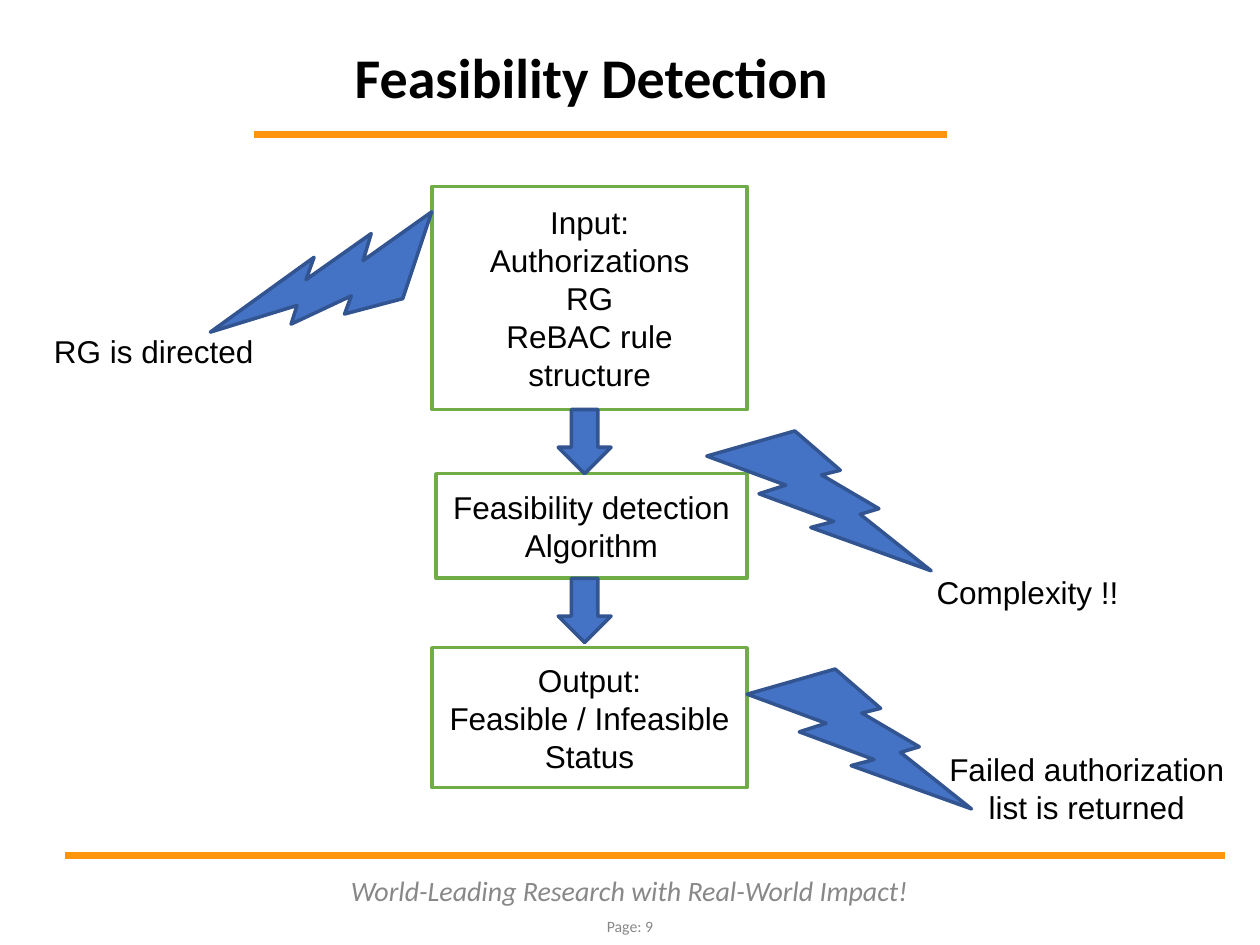
from lxml import etree
from pptx import Presentation
from pptx.dml.color import RGBColor
from pptx.enum.shapes import MSO_CONNECTOR, MSO_SHAPE
from pptx.enum.text import MSO_ANCHOR, PP_ALIGN
from pptx.oxml.ns import qn
from pptx.util import Inches, Pt

COLORS = {
    "rule": "FF950E", "box": "70AD47", "marker": "4472C4", "marker_line": "325491",
    "white": "FFFFFF", "black": "000000", "footer": "888888",
}

# Places are (left, top, width, height) in inches
RULES = [(2.02, 1.07, 5.5), (0.52, 6.79, 9.2)]  # left, top, length
HEADINGS = [
    ("World-Leading Research with Real-World Impact!", (2.58, 6.89, 4.83, 0.36),
     dict(size=16, color="footer", italic=True)),
    ("Page: 9", (4.06, 7.17, 1.88, 0.36), dict(size=9, color="footer")),
    ("Feasibility Detection", (2, 0.41, 5.39, 0.51),
     dict(size=32, bold=True, anchor=MSO_ANCHOR.BOTTOM)),
]
STEPS = [
    ("Input:\nAuthorizations\nRG\nReBAC rule structure", (3.43, 1.48, 2.5, 1.77)),
    ("Feasibility detection Algorithm", (3.46, 3.76, 2.47, 0.83)),
    ("Output:\nFeasible / Infeasible\nStatus", (3.43, 5.14, 2.5, 1.11)),
]
NOTES = [
    ("Failed authorization\nlist is returned", (7.25, 6, 2.75, 0.51)),
    ("RG is directed", (-0.03, 2.53, 2.5, 0.51)),
    ("Complexity !!", (6.71, 4.36, 2.89, 0.67)),
]
BOLTS = [(5.61, 3.42, 0), (5.93, 5.31, 0), (1.74, 1.66, 124.4)]  # left, top, rotation
BOLT_SIZE = (1.78, 1.11)
ARROW_LEFT, ARROW_SIZE = 4.43, (0.42, 0.51)


def rgb(name):
    return RGBColor.from_string(COLORS[name])


def add_shape(slide, kind, place, fill, line=None):
    s = slide.shapes.add_shape(kind, *map(Inches, place))
    s.shadow.inherit = False
    s.fill.solid()
    s.fill.fore_color.rgb = rgb(fill)
    if line:
        s.line.color.rgb = rgb(line)
        s.line.width = Pt(2)
    else:
        s.line.fill.background()
    return s


def write(s, text, size=18, font="Arial", color="black", bold=False, italic=False,
          anchor=MSO_ANCHOR.MIDDLE):
    """Fill a shape with centred text, one paragraph a line."""
    tf = s.text_frame
    tf.word_wrap = True
    tf.vertical_anchor = anchor
    tf.text = text
    for p in tf.paragraphs:
        p.alignment = PP_ALIGN.CENTER
        for r in p.runs:
            f = r.font
            f.size, f.name, f.bold, f.italic = Pt(size), font, bold, italic
            f.color.rgb = rgb(color)


def add_rule(slide, left, top, length):
    c = slide.shapes.add_connector(
        MSO_CONNECTOR.STRAIGHT, *map(Inches, (left, top, left + length, top)))
    c.line.color.rgb = rgb("rule")
    c.line.width = Pt(4)
    etree.SubElement(c._element.spPr, qn("a:effectLst"))


def main():
    prs = Presentation()
    prs.slide_width, prs.slide_height = Inches(10), Inches(7.5)
    slide = prs.slides.add_slide(prs.slide_layouts[6])

    for rule in RULES:
        add_rule(slide, *rule)
    for text, place, style in HEADINGS:
        write(slide.shapes.add_textbox(*map(Inches, place)), text, font="Calibri", **style)
    for text, place in STEPS:
        write(add_shape(slide, MSO_SHAPE.RECTANGLE, place, "white", "box"), text)
    for text, place in NOTES:
        write(add_shape(slide, MSO_SHAPE.RECTANGLE, place, "white"), text)
    for left, top, rotation in BOLTS:
        bolt = add_shape(slide, MSO_SHAPE.LIGHTNING_BOLT, (left, top, *BOLT_SIZE),
                         "marker", "marker_line")
        bolt.rotation = rotation
    # An arrow hangs from the bottom edge of every step but the last
    for _, (_, top, _, height) in STEPS[:-1]:
        add_shape(slide, MSO_SHAPE.DOWN_ARROW, (ARROW_LEFT, top + height, *ARROW_SIZE),
                  "marker", "marker_line")

    prs.save("out.pptx")


if __name__ == "__main__":
    main()
